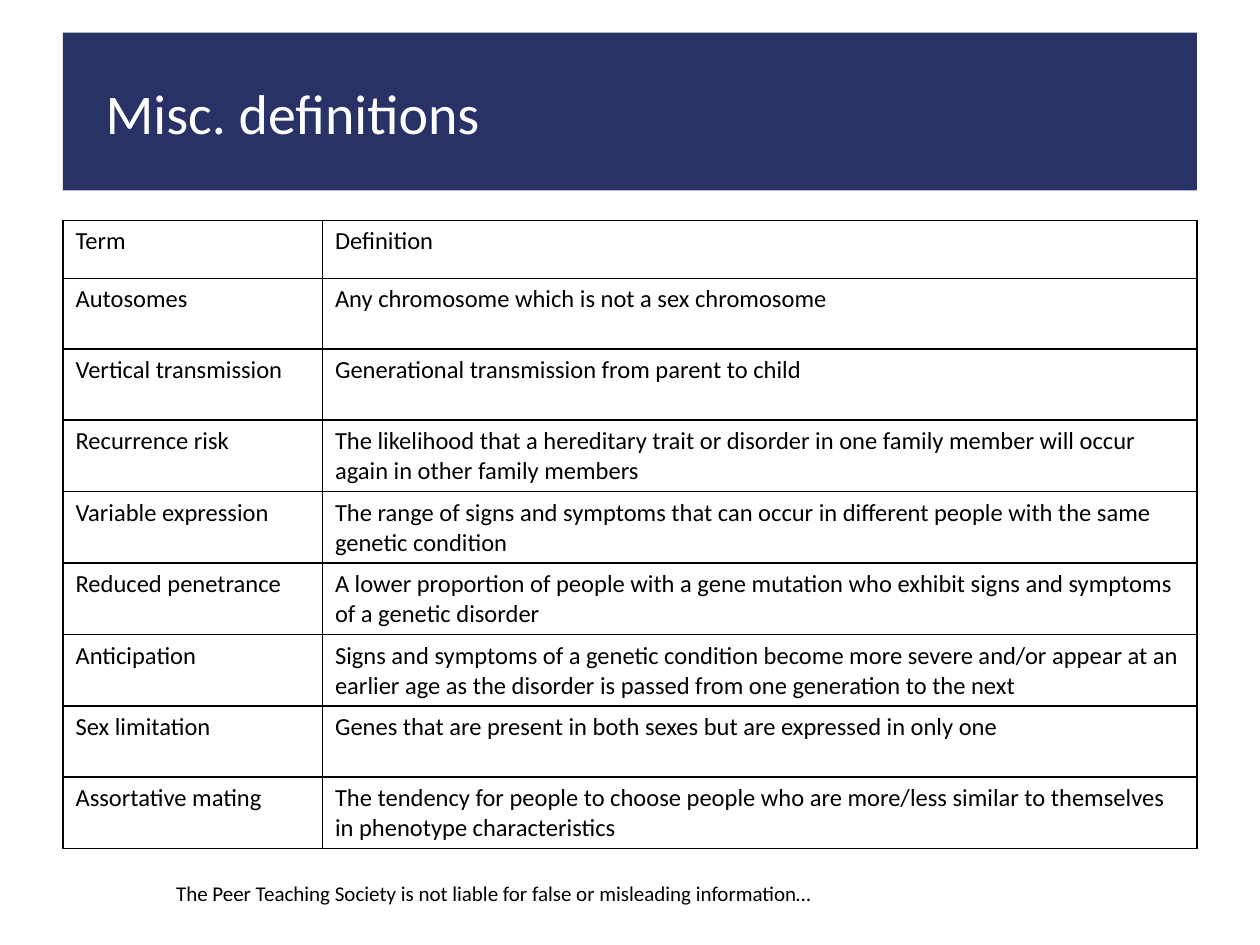
from lxml.etree import SubElement
from pptx import Presentation
from pptx.dml.color import RGBColor
from pptx.enum.shapes import MSO_SHAPE
from pptx.enum.text import MSO_ANCHOR
from pptx.oxml.ns import qn
from pptx.util import Cm, Pt

COLORS = {"navy": "293267", "white": "FFFFFF", "black": "000000"}
ROWS = [
    ("Term", "Definition"),
    ("Autosomes", "Any chromosome which is not a sex chromosome"),
    ("Vertical transmission", "Generational transmission from parent to child"),
    ("Recurrence risk",
     "The likelihood that a hereditary trait or disorder in one family member "
     "will occur again in other family members"),
    ("Variable expression",
     "The range of signs and symptoms that can occur in different people "
     "with the same genetic condition"),
    ("Reduced penetrance",
     "A lower proportion of people with a gene mutation who exhibit signs "
     "and symptoms of a genetic disorder"),
    ("Anticipation",
     "Signs and symptoms of a genetic condition become more severe and/or appear "
     "at an earlier age as the disorder is passed from one generation to the next"),
    ("Sex limitation",
     "Genes that are present in both sexes but are expressed in only one"),
    ("Assortative mating",
     "The tendency for people to choose people who are more/less similar "
     "to themselves in phenotype characteristics"),
]


def write(frame, text, size, color="black"):
    frame.word_wrap = True
    run = frame.paragraphs[0].add_run()
    run.text = text
    run.font.name = "Calibri"
    run.font.size = Pt(size)
    run.font.color.rgb = RGBColor.from_string(COLORS[color])


def outline(cell):
    """Draw a thin black border on all four sides of a cell."""
    props = cell._tc.get_or_add_tcPr()
    for place, side in enumerate(("lnL", "lnR", "lnT", "lnB")):
        line = SubElement(props, qn(f"a:{side}"), w=str(Pt(1)))
        fill = SubElement(line, qn("a:solidFill"))
        SubElement(fill, qn("a:srgbClr"), val=COLORS["black"])
        props.insert(place, line)


deck = Presentation()
deck.slide_width, deck.slide_height = Cm(25.4), Cm(19.05)
slide = deck.slides.add_slide(deck.slide_layouts[6])
shapes = slide.shapes

foot = shapes.add_textbox(Cm(3.3), Cm(17.63), Cm(14.07), Cm(0.76))
write(foot.text_frame, "The Peer Teaching Society is not liable for false "
      "or misleading information…", 12)

band = shapes.add_shape(MSO_SHAPE.RECTANGLE, Cm(1.27), Cm(0.66), Cm(22.86), Cm(3.18))
band.shadow.inherit = False
band.fill.solid()
band.fill.fore_color.rgb = RGBColor.from_string(COLORS["navy"])
band.line.fill.background()

title = shapes.add_textbox(Cm(1.88), Cm(1.45), Cm(18.85), Cm(1.63))
write(title.text_frame, "Misc. definitions", 32, "white")

widths = [Cm(5.23), Cm(17.63)]
heights = [Cm(1.17)] + [Cm(1.43)] * (len(ROWS) - 1)
table = shapes.add_table(len(ROWS), len(widths), Cm(1.27), Cm(4.44),
                         sum(widths), sum(heights)).table
table.first_row = table.horz_banding = False
for column, width in zip(table.columns, widths):
    column.width = width
for row, height, texts in zip(table.rows, heights, ROWS):
    row.height = height
    for cell, text in zip(row.cells, texts):
        cell.fill.background()
        cell.vertical_anchor = MSO_ANCHOR.TOP
        outline(cell)
        write(cell.text_frame, text, 14)

deck.save("out.pptx")
